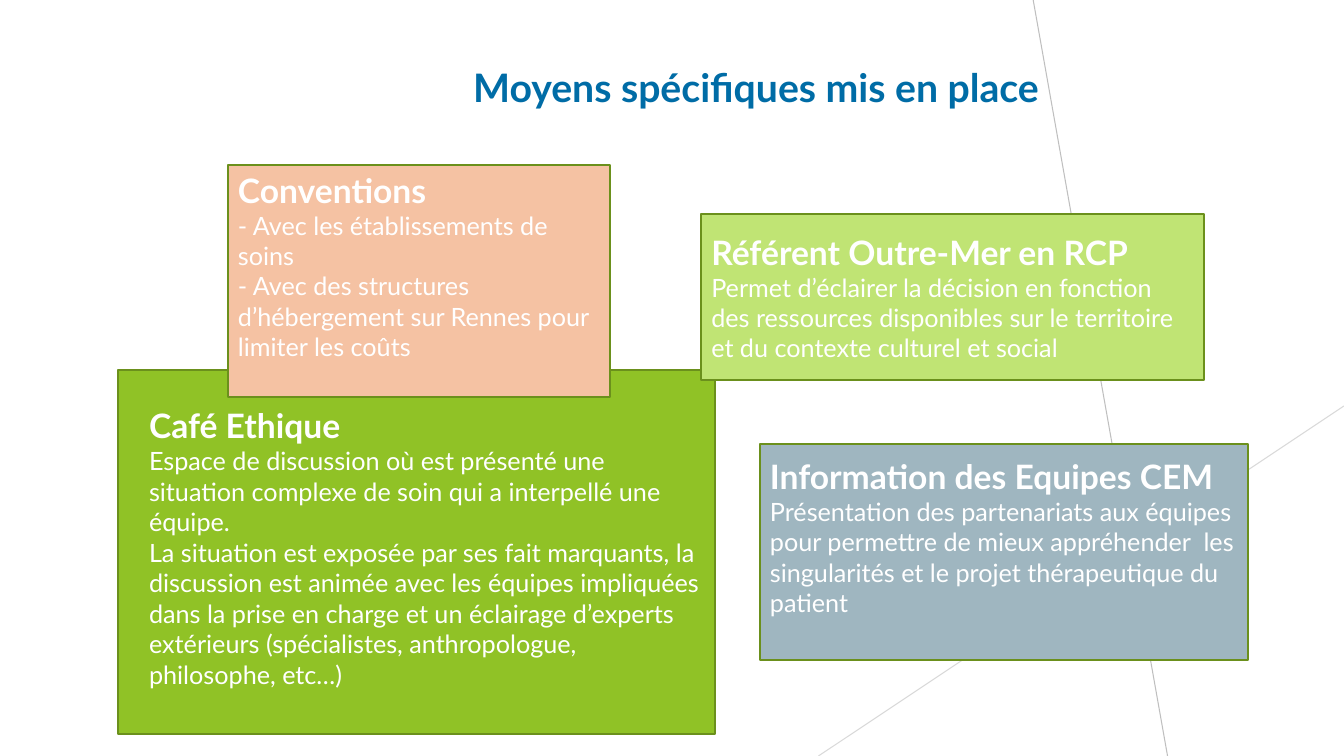
import pptx
import pptx.dml.color
import pptx.enum.shapes
import pptx.enum.text
import pptx.oxml.ns
import pptx.util
from lxml import etree

Pt = pptx.util.Pt
FONT = "Lato"
CARD_BORDER = "6B901C"
BLANK_LINE = 21.6

# box (left, top, width, height), fill, heading, body paragraphs, layout options
CARDS = [
    ((84.2, 264.2, 426.4, 260), "90C226", "Café Ethique", [
        "Espace de discussion où est présenté une situation complexe de soin "
        "qui a interpellé une équipe.",
        "La situation est exposée par ses fait marquants, la discussion est animée "
        "avec les équipes impliquées dans la prise en charge et un éclairage "
        "d’experts extérieurs (spécialistes, anthropologue, philosophe, etc…)",
    ], {"indent": 15.1, "line_spacing": 21.8}),
    ((501, 152.8, 359.3, 118.7), "C0E474", "Référent Outre-Mer en RCP", [
        "Permet d’éclairer la décision en fonction des ressources disponibles "
        "sur le territoire et du contexte culturel et social",
    ], {}),
    ((162.9, 117.7, 272.8, 165.7), "F5C2A3", "Conventions", [
        "- Avec les établissements de soins",
        "- Avec des structures d’hébergement sur Rennes pour limiter les coûts",
    ], {"room_below": BLANK_LINE}),
    ((542.9, 317, 348.5, 154.6), "9FB6C0", "Information des Equipes CEM", [
        "Présentation des partenariats aux équipes pour permettre de mieux "
        "appréhender  les singularités et le projet thérapeutique du patient",
    ], {"room_below": BLANK_LINE}),
]


def color(hex_string):
    return pptx.dml.color.RGBColor.from_string(hex_string)


def add_text(paragraph, text, size, hex_string, bold=False):
    run = paragraph.add_run()
    run.text = text
    run.font.name = FONT
    run.font.size = Pt(size)
    run.font.bold = bold
    run.font.color.rgb = color(hex_string)


def set_frame(frame, left=7.2, top=3.6, bottom=3.6):
    """Wrap the text, centre it vertically and set its insets."""
    frame.word_wrap = True
    frame.vertical_anchor = pptx.enum.text.MSO_ANCHOR.MIDDLE
    frame.margin_left, frame.margin_right = Pt(left), Pt(7.2)
    frame.margin_top, frame.margin_bottom = Pt(top), Pt(bottom)


def add_background_line(slide, start, end, hex_string):
    line = slide.shapes.add_connector(
        pptx.enum.shapes.MSO_CONNECTOR.STRAIGHT, *map(Pt, start + end))
    line.line.color.rgb = color(hex_string)
    line.line.width = Pt(0.75)
    properties = line._element.spPr
    etree.SubElement(properties, pptx.oxml.ns.qn("a:effectLst"))


def add_title(slide, box, text):
    title = slide.shapes.add_textbox(*map(Pt, box))
    set_frame(title.text_frame, top=22.8)
    paragraph = title.text_frame.paragraphs[0]
    paragraph.alignment = pptx.enum.text.PP_ALIGN.CENTER
    add_text(paragraph, text, 28, "006CA6", bold=True)


def add_card(slide, box, fill, heading, body, indent=0, line_spacing=None, room_below=0):
    card = slide.shapes.add_shape(
        pptx.enum.shapes.MSO_SHAPE.RECTANGLE, *map(Pt, box))
    card.shadow.inherit = False
    card.fill.solid()
    card.fill.fore_color.rgb = color(fill)
    card.line.color.rgb = color(CARD_BORDER)
    card.line.width = Pt(1.5)
    frame = card.text_frame
    set_frame(frame, left=7.2 + indent, bottom=3.6 + room_below)
    for index, text in enumerate([heading] + body):
        is_heading = index == 0
        paragraph = frame.paragraphs[0] if is_heading else frame.add_paragraph()
        paragraph.alignment = pptx.enum.text.PP_ALIGN.LEFT
        if line_spacing:
            paragraph.line_spacing = Pt(line_spacing)
        add_text(paragraph, text, 24 if is_heading else 18, "FFFFFF", bold=is_heading)


def main():
    presentation = pptx.Presentation()
    presentation.slide_width, presentation.slide_height = Pt(960), Pt(540)
    slide = presentation.slides.add_slide(presentation.slide_layouts[6])
    add_background_line(slide, (738, 0), (834, 540), "BFBFBF")
    add_background_line(slide, (960, 290), (584.6, 540), "D9D9D9")
    add_title(slide, (300, 18.7, 480, 67.7), "Moyens spécifiques mis en place")
    for box, fill, heading, body, options in CARDS:
        add_card(slide, box, fill, heading, body, **options)
    presentation.save("out.pptx")


if __name__ == "__main__":
    main()
